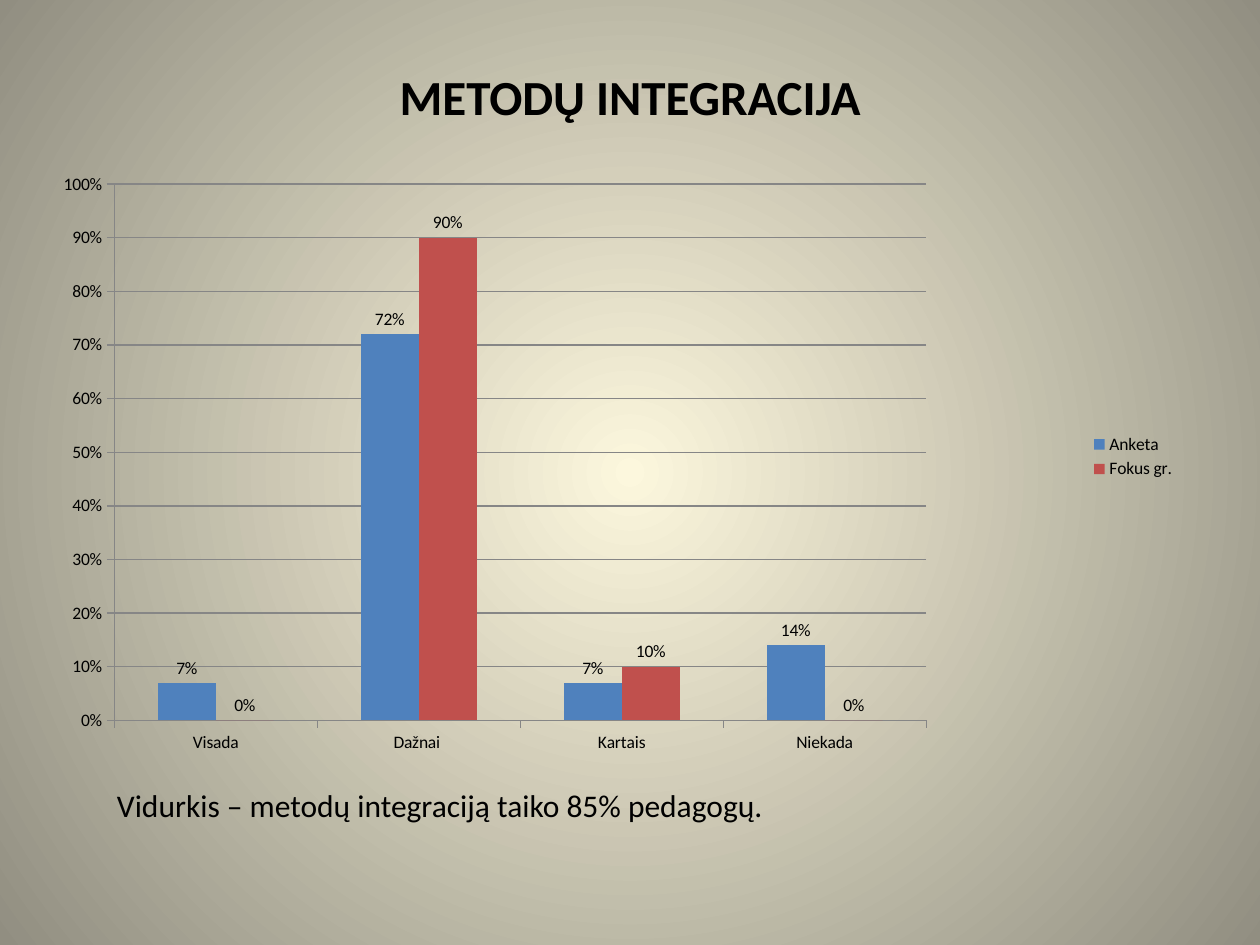
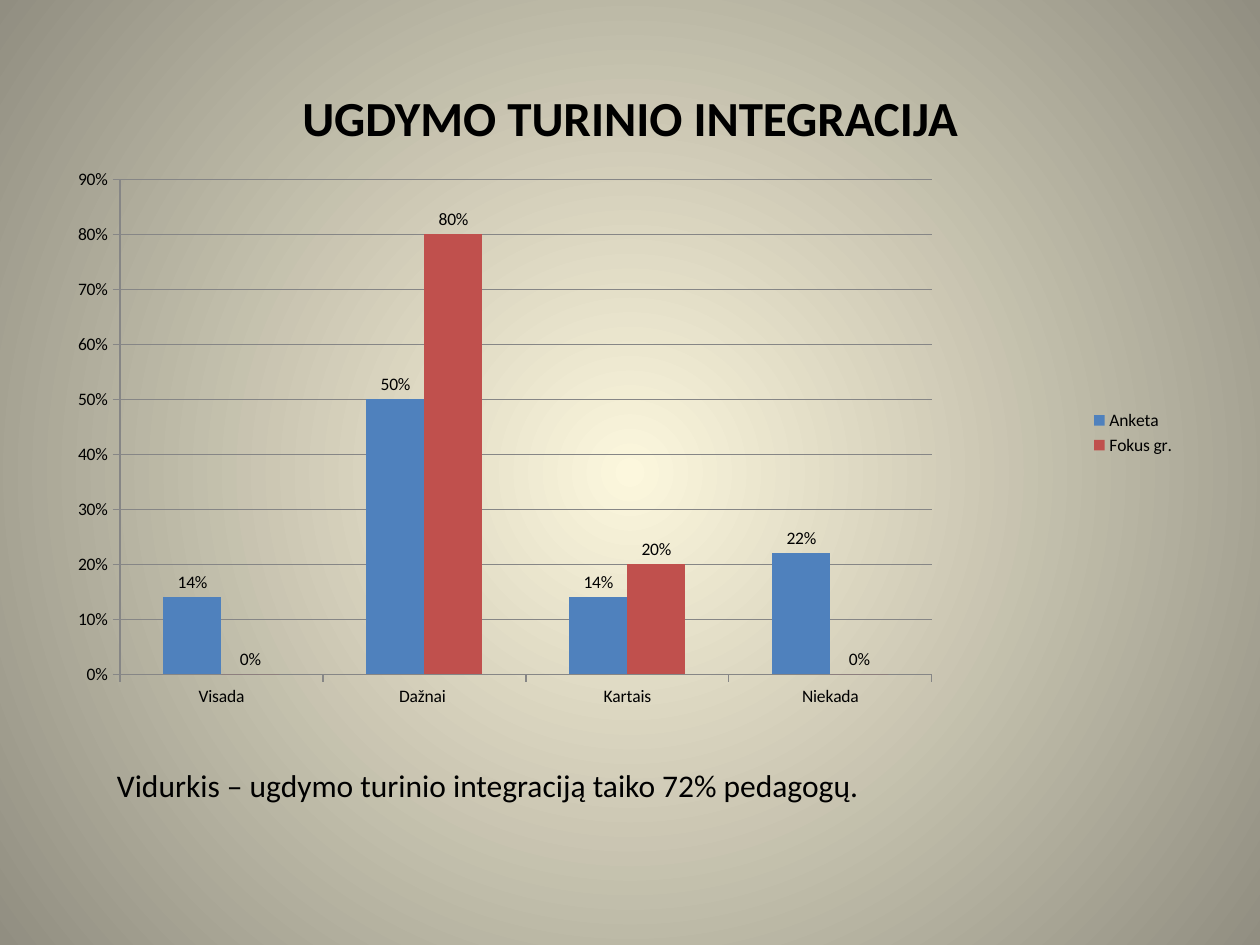
"""Build two survey slides on the integration of teaching methods and content."""
from dataclasses import dataclass

from lxml import etree
from pptx import Presentation
from pptx.chart.data import CategoryChartData
from pptx.dml.color import RGBColor
from pptx.enum.chart import XL_CHART_TYPE, XL_LABEL_POSITION, XL_LEGEND_POSITION, XL_TICK_MARK
from pptx.enum.text import MSO_ANCHOR, MSO_AUTO_SIZE, PP_ALIGN
from pptx.oxml.ns import qn
from pptx.util import Inches, Pt

COLUMNS = XL_CHART_TYPE.COLUMN_CLUSTERED
OUTSIDE_END = XL_LABEL_POSITION.OUTSIDE_END
LEGEND_RIGHT = XL_LEGEND_POSITION.RIGHT
TICK_OUT, TICK_NONE = XL_TICK_MARK.OUTSIDE, XL_TICK_MARK.NONE
MIDDLE = MSO_ANCHOR.MIDDLE
GROW = MSO_AUTO_SIZE.SHAPE_TO_FIT_TEXT
CENTER, LEFT = PP_ALIGN.CENTER, PP_ALIGN.LEFT


@dataclass(frozen=True)
class Theme:
    """Colours, font and type sizes shared by the slides."""

    font: str = "Calibri"
    ink: str = "000000"
    grid: str = "868686"
    glow: str = "FCF7DD"
    edge: str = "918E81"
    series: tuple = ("4F81BD", "C0504D")
    title_size: int = 28
    note_size: int = 18
    chart_size: int = 10


THEME = Theme()
CATEGORIES = ("Visada", "Dažnai ", "Kartais", "Niekada")
SERIES = ("Anketa", "Fokus gr.")
SLIDES = (
    {
        "title": "METODŲ INTEGRACIJA",
        "title_box": (0.5, 0.3, 9, 0.93),
        "chart_box": (0.43, 1.15, 9, 4.95),
        "plot": (0.053, 0.063, 0.716, 0.86),
        "top": 1,
        "values": ((0.07, 0.72, 0.07, 0.14), (0, 0.9, 0.1, 0)),
        "note": "Vidurkis – metodų integraciją taiko 85% pedagogų.",
        "note_box": (0.83, 6.19, 7.8, 0.4),
    },
    {
        "title": "UGDYMO TURINIO INTEGRACIJA",
        "title_box": (0.5, 0.3, 9, 1.25),
        "chart_box": (0.43, 1.15, 9, 4.57),
        "plot": (0.058, 0.06, 0.716, 0.86),
        "top": 0.9,
        "values": ((0.14, 0.5, 0.14, 0.22), (0, 0.8, 0.2, 0)),
        "note": "Vidurkis – ugdymo turinio integraciją taiko 72% pedagogų.",
        "note_box": (0.83, 6.03, 6.93, 0.4),
    },
)


def apply(target, formats):
    """Set every attribute named in formats on target."""
    for name, value in formats.items():
        setattr(target, name, value)


def style_font(font, size, bold=False):
    """Give a font the theme typeface and colour."""
    apply(font, {"name": THEME.font, "size": Pt(size), "bold": bold})
    font.color.rgb = RGBColor.from_string(THEME.ink)


def set_background(master):
    """Fill the master with a radial gradient spreading from its centre."""
    fill = master.background.fill
    fill.gradient()
    for stop, color in zip(fill.gradient_stops, (THEME.glow, THEME.edge)):
        stop.color.rgb = RGBColor.from_string(color)
    lin = master.element.find(f".//{qn('p:bg')}//{qn('a:lin')}")
    radial = etree.Element(qn("a:path"), {"path": "circle"})
    etree.SubElement(radial, qn("a:fillToRect"), dict.fromkeys("ltrb", "50000"))
    lin.getparent().replace(lin, radial)


def write(tf, text, size, align, bold=False):
    """Write one styled paragraph into a text frame."""
    p = tf.paragraphs[0]
    p.alignment = align
    r = p.add_run()
    r.text = text
    style_font(r.font, size, bold)


def add_title(s, text, box):
    """Place and format the title placeholder."""
    sp = s.shapes.title
    apply(sp, dict(zip(("left", "top", "width", "height"), map(Inches, box))))
    sp.text_frame.vertical_anchor = MIDDLE
    write(sp.text_frame, text, THEME.title_size, CENTER, True)


def add_note(s, text, box):
    """Add the conclusion under the chart."""
    tf = s.shapes.add_textbox(*map(Inches, box)).text_frame
    apply(tf, {"word_wrap": True, "auto_size": GROW})
    write(tf, text, THEME.note_size, LEFT)


def set_plot_area(chart, area):
    """Fix the inner plot area as fractions of the chart."""
    plot_area = chart.element.find(f".//{qn('c:plotArea')}")
    for old in plot_area.findall(qn("c:layout")):
        plot_area.remove(old)
    layout = etree.Element(qn("c:layout"))
    manual = etree.SubElement(layout, qn("c:manualLayout"))
    settings = {"layoutTarget": "inner", "xMode": "edge", "yMode": "edge"}
    settings.update(zip("xywh", area))
    for tag, value in settings.items():
        etree.SubElement(manual, qn(f"c:{tag}"), val=str(value))
    plot_area.insert(0, layout)


def style_line(line):
    """Draw a thin grey chart line."""
    line.color.rgb = RGBColor.from_string(THEME.grid)
    line.width = Pt(0.75)


def add_chart(s, values, box, area, top):
    """Add a clustered column chart of survey shares."""
    data = CategoryChartData(number_format="0%")
    data.categories = CATEGORIES
    for name, shares in zip(SERIES, values):
        data.add_series(name, shares)
    chart = s.shapes.add_chart(COLUMNS, *map(Inches, box), data).chart
    apply(chart, {"has_title": False, "has_legend": True})
    style_font(chart.font, THEME.chart_size)
    apply(chart.legend, {"position": LEGEND_RIGHT, "include_in_layout": False})

    for axis in (chart.category_axis, chart.value_axis):
        apply(axis, {"major_tick_mark": TICK_OUT, "minor_tick_mark": TICK_NONE})
        style_line(axis.format.line)
    axis = chart.value_axis
    apply(axis, {"minimum_scale": 0, "maximum_scale": top, "major_unit": 0.1,
                 "has_major_gridlines": True})
    style_line(axis.major_gridlines.format.line)
    apply(axis.tick_labels, {"number_format": "0%", "number_format_is_linked": False})

    plot = chart.plots[0]
    apply(plot, {"gap_width": 150, "overlap": 0, "vary_by_categories": False})
    for series, color in zip(plot.series, THEME.series):
        series.format.fill.solid()
        series.format.fill.fore_color.rgb = RGBColor.from_string(color)
        apply(series.data_labels, {"show_value": True, "number_format": "0%",
                                   "number_format_is_linked": False,
                                   "position": OUTSIDE_END})
    set_plot_area(chart, area)


def main():
    """Build and save the presentation."""
    prs = Presentation()
    prs.slide_width, prs.slide_height = Inches(10), Inches(7.5)
    set_background(prs.slide_master)
    title_only = prs.slide_layouts.get_by_name("Title Only")
    for page in SLIDES:
        s = prs.slides.add_slide(title_only)
        add_title(s, page["title"], page["title_box"])
        add_chart(s, page["values"], page["chart_box"], page["plot"], page["top"])
        add_note(s, page["note"], page["note_box"])
    prs.save("out.pptx")


if __name__ == "__main__":
    main()
